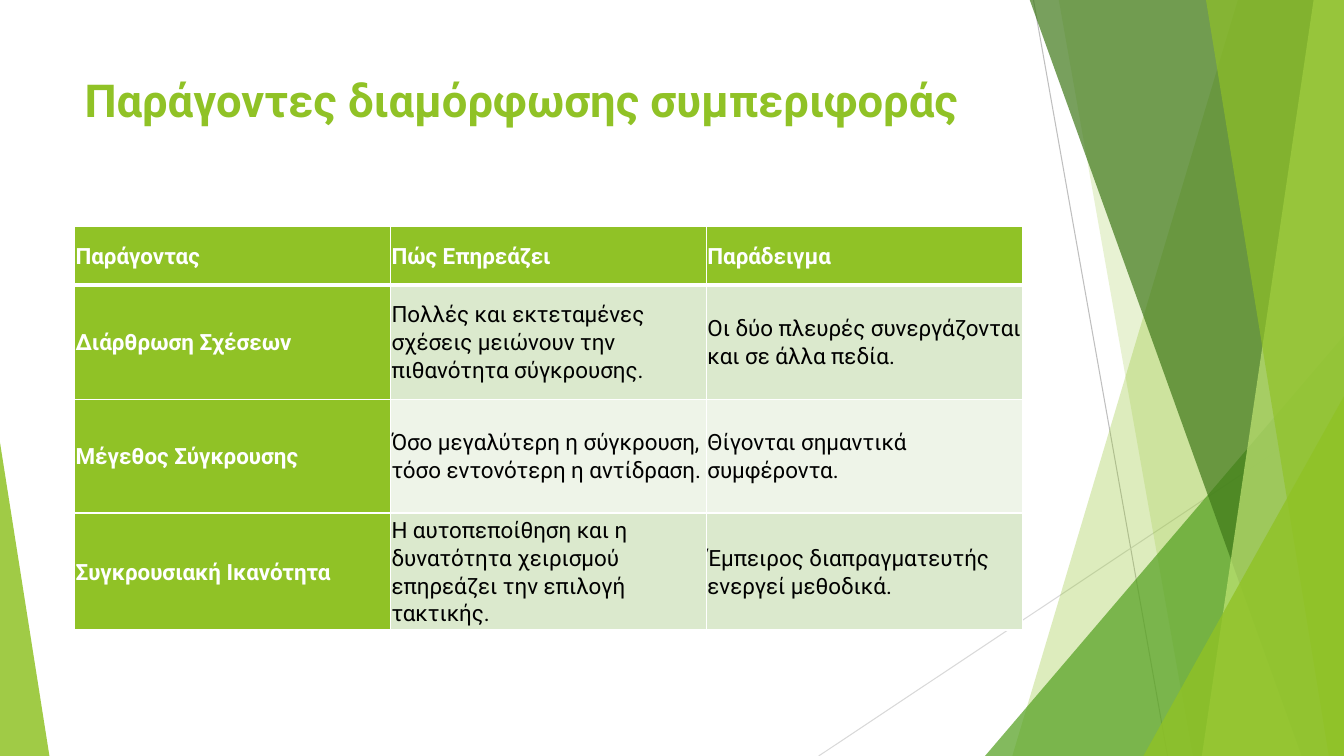
from lxml.etree import SubElement
from pptx import Presentation
from pptx.dml.color import RGBColor
from pptx.enum.shapes import MSO_CONNECTOR, MSO_SHAPE
from pptx.enum.text import MSO_ANCHOR
from pptx.oxml.ns import qn
from pptx.util import Inches, Pt

# Content
TITLE = "Παράγοντες διαμόρφωσης συμπεριφοράς"
FACTORS = [
    ("Παράγοντας", "Πώς Επηρεάζει", "Παράδειγμα"),
    ("Διάρθρωση Σχέσεων",
     "Πολλές και εκτεταμένες σχέσεις μειώνουν την πιθανότητα σύγκρουσης.",
     "Οι δύο πλευρές συνεργάζονται και σε άλλα πεδία."),
    ("Μέγεθος Σύγκρουσης",
     "Όσο μεγαλύτερη η σύγκρουση, τόσο εντονότερη η αντίδραση.",
     "Θίγονται σημαντικά συμφέροντα."),
    ("Συγκρουσιακή Ικανότητα",
     "Η αυτοπεποίθηση και η δυνατότητα χειρισμού επηρεάζει την επιλογή τακτικής.",
     "Έμπειρος διαπραγματευτής ενεργεί μεθοδικά."),
]

THEME = {
    "font": "Roboto", "title_size": 32.4, "cell_size": 16,
    "green": "90C226", "leaf": "54A021", "forest": "3F7819", "lime": "C0E474",
    "white": "FFFFFF", "black": "000000", "bands": ("DBE9CD", "EEF4E8"),
    "steep_ray": "BFBFBF", "flat_ray": "D9D9D9",
}

# Geometry in inches
WIDTH, HEIGHT = 13.33, 7.5
LEFT, CONTENT_WIDTH = 0.74, 9.4
TITLE_TOP, TITLE_HEIGHT = 0.67, 1.44
TABLE_TOP, HEADER_HEIGHT, ROW_HEIGHT = 2.25, 0.58, 1.13
BLEED_TOP = -0.01

RAYS = [
    ((10.25, 0), (11.58, HEIGHT), "steep_ray"),
    ((WIDTH, 4.03), (8.12, HEIGHT), "flat_ray"),
]
# Back to front. "blade": top x, bottom x, reaching the right edge.
# "peak": left, top, width, apex position, standing on the bottom edge.
FACETS = [
    ("blade", (12.28, 10.04), "green", 30),
    ("blade", (10.5, 11.83), "green", 20),
    ("peak", (9.77, 3.33, 3.56, 1), "leaf", 72),
    ("blade", (10.21, 12.91), "forest", 70),
    ("blade", (13.03, 11.92), "lime", 70),
    ("blade", (11.96, 13.18), "green", 65),
    ("peak", (11.34, 3.93, 1.99, 1), "green", 80),
    ("peak", (0, 4.39, 0.49, 0), "green", 85),
]

deck = Presentation()
deck.slide_width, deck.slide_height = Inches(WIDTH), Inches(HEIGHT)
slide = deck.slides.add_slide(deck.slide_layouts[6])


def color(name):
    return RGBColor.from_string(THEME.get(name, name))


def apply(target, formats):
    for attribute, value in formats.items():
        setattr(target, attribute, value)


def write(paragraph, text, size, ink, bold):
    run = paragraph.add_run()
    run.text = text
    apply(run.font, {"name": THEME["font"], "size": Pt(size), "bold": bold})
    run.font.color.rgb = color(ink)


def blade(top_x, bottom_x):
    outline = slide.shapes.build_freeform(Inches(top_x), Inches(BLEED_TOP))
    corners = [(WIDTH, BLEED_TOP), (WIDTH, HEIGHT), (bottom_x, HEIGHT)]
    outline.add_line_segments([(Inches(x), Inches(y)) for x, y in corners], close=True)
    return outline.convert_to_shape()


def peak(left, top, width, apex):
    triangle = slide.shapes.add_shape(
        MSO_SHAPE.ISOSCELES_TRIANGLE,
        Inches(left), Inches(top), Inches(width), Inches(HEIGHT - top))
    triangle.adjustments[0] = apex
    return triangle


def set_border(cell, sides):
    properties = cell._tc.get_or_add_tcPr()
    for position, (side, points) in enumerate(sides.items()):
        border = properties.makeelement(qn(f"a:{side}"), {"w": str(Pt(points))})
        fill = SubElement(border, qn("a:solidFill"))
        SubElement(fill, qn("a:srgbClr"), val=THEME["white"])
        properties.insert(position, border)


# Thin rays behind the facets
for start, end, ink in RAYS:
    ray = slide.shapes.add_connector(
        MSO_CONNECTOR.STRAIGHT, *(Inches(value) for value in start + end))
    ray.line.color.rgb = color(ink)
    ray.line.width = Pt(0.75)
    SubElement(ray._element.spPr, qn("a:effectLst"))

# Translucent facets
BUILDERS = {"blade": blade, "peak": peak}
for kind, measures, ink, opacity in FACETS:
    facet = BUILDERS[kind](*measures)
    facet.shadow.inherit = False
    facet.line.fill.background()
    facet.fill.solid()
    facet.fill.fore_color.rgb = color(ink)
    tint = facet._element.spPr.find(qn("a:solidFill"))[0]
    SubElement(tint, qn("a:alpha"), val=str(opacity * 1000))

# Title
heading = slide.shapes.add_textbox(
    Inches(LEFT), Inches(TITLE_TOP), Inches(CONTENT_WIDTH), Inches(TITLE_HEIGHT)).text_frame
apply(heading, {"word_wrap": True, "vertical_anchor": MSO_ANCHOR.TOP})
write(heading.paragraphs[0], TITLE, THEME["title_size"], "green", True)

# Table of factors
heights = [HEADER_HEIGHT] + [ROW_HEIGHT] * (len(FACTORS) - 1)
factors = slide.shapes.add_table(
    len(FACTORS), len(FACTORS[0]), Inches(LEFT), Inches(TABLE_TOP),
    Inches(CONTENT_WIDTH), Inches(sum(heights))).table
apply(factors, {"first_col": True, "horz_banding": False})
margins = ("margin_left", "margin_top", "margin_right", "margin_bottom")
cell_format = {**dict.fromkeys(margins, Inches(0.01)), "vertical_anchor": MSO_ANCHOR.MIDDLE}

for row, texts in enumerate(FACTORS):
    factors.rows[row].height = Inches(heights[row])
    for column, text in enumerate(texts):
        cell = factors.cell(row, column)
        is_label = row == 0 or column == 0
        apply(cell, cell_format)
        cell.fill.solid()
        cell.fill.fore_color.rgb = color("green" if is_label else THEME["bands"][(row - 1) % 2])
        set_border(cell, {"lnL": 1, "lnR": 1,
                          "lnT": 3 if row == 1 else 1, "lnB": 3 if row == 0 else 1})
        paragraph = cell.text_frame.paragraphs[0]
        apply(paragraph, {"line_spacing": 1.07, "space_after": Pt(8)})
        write(paragraph, text, THEME["cell_size"], "white" if is_label else "black", is_label)

deck.save("out.pptx")
